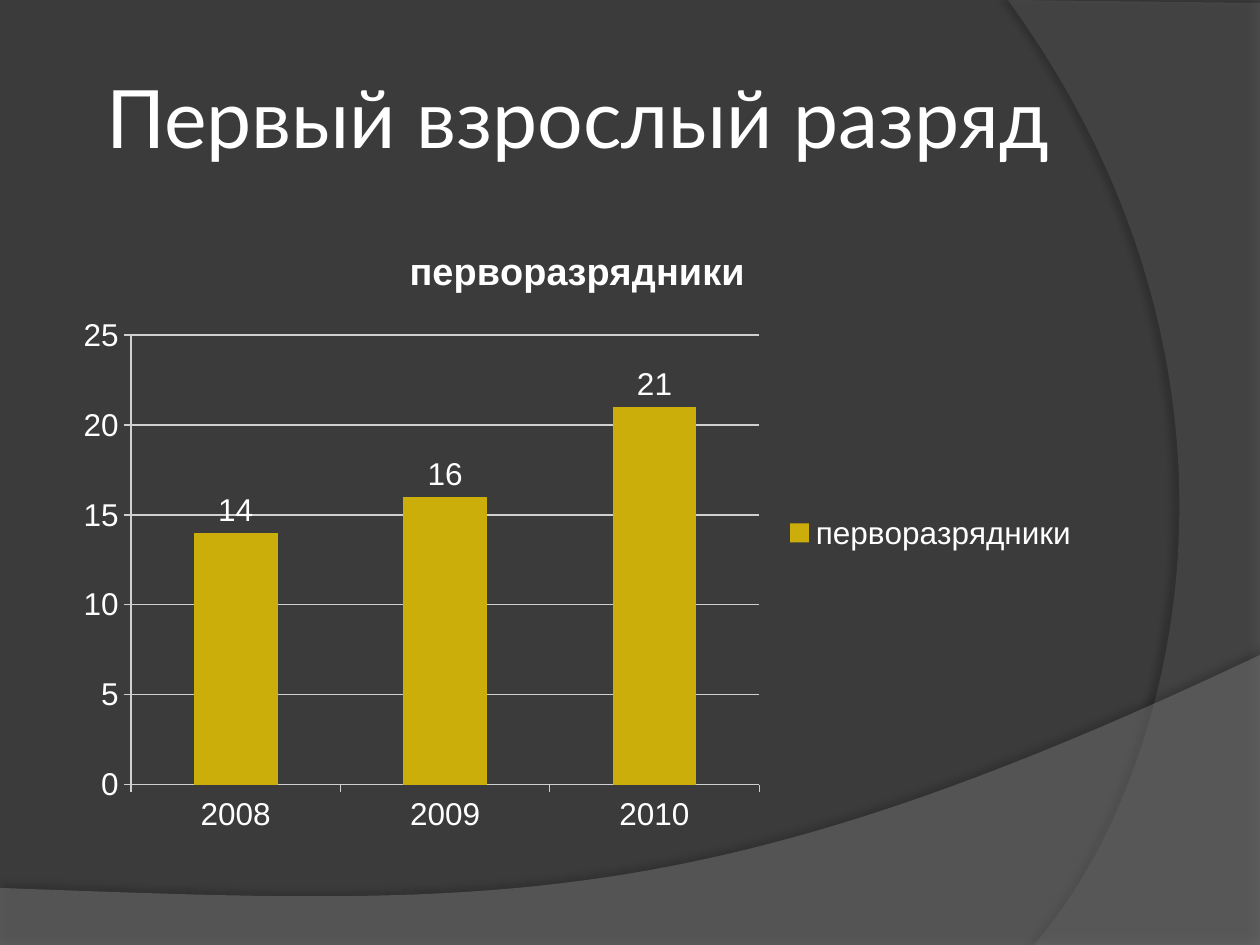
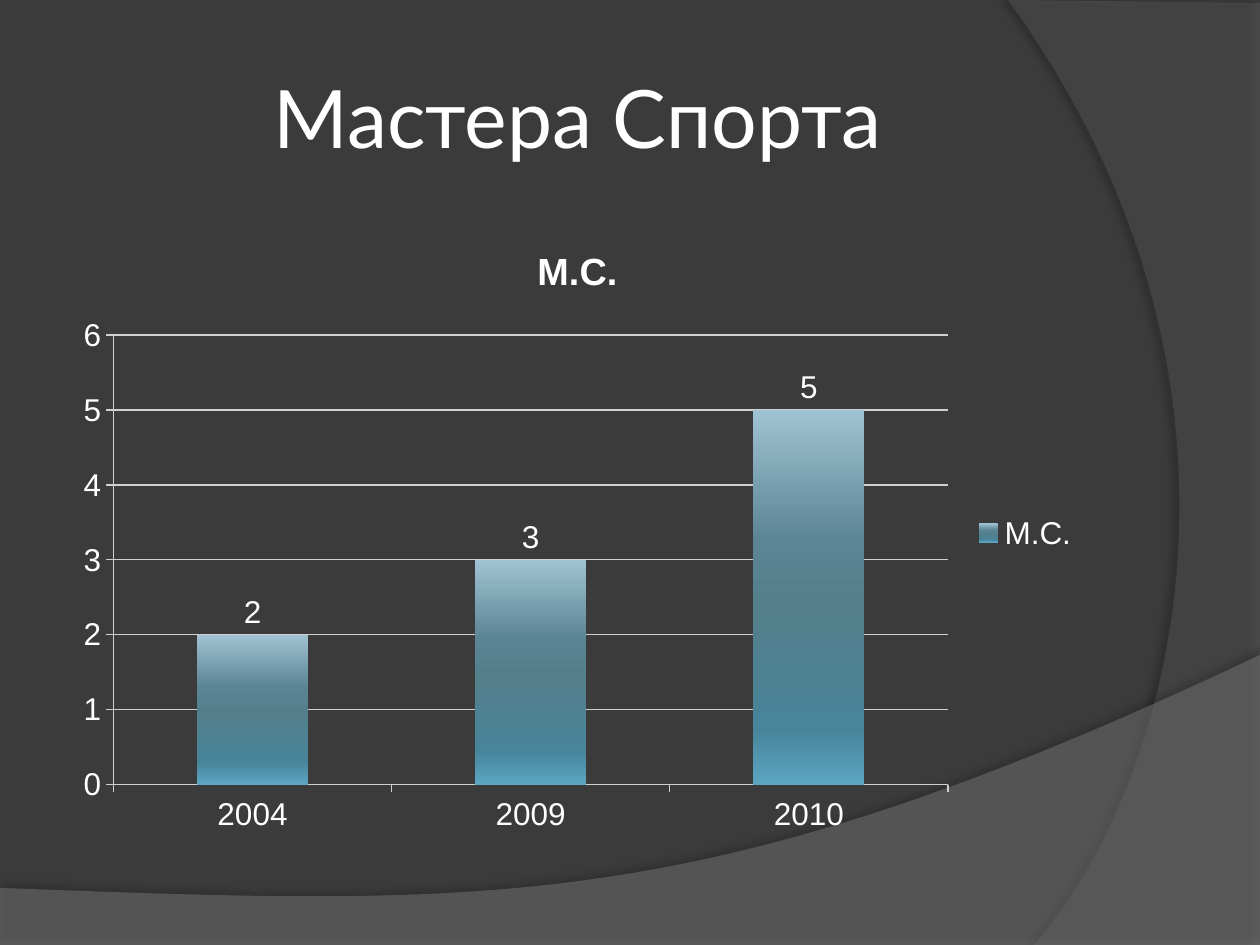
from dataclasses import dataclass

from lxml.etree import SubElement
from pptx import Presentation
from pptx.chart.data import CategoryChartData
from pptx.dml.color import RGBColor
from pptx.enum.chart import XL_CHART_TYPE, XL_LABEL_POSITION, XL_LEGEND_POSITION, XL_TICK_MARK
from pptx.enum.text import MSO_ANCHOR, MSO_AUTO_SIZE, PP_ALIGN
from pptx.oxml.ns import qn
from pptx.util import Emu, Pt


@dataclass(frozen=True)
class Theme:
    back: str = "3B3B3B"
    text: str = "FFFFFF"
    line: str = "D0D0D0"
    shade: str = "000000"
    floor: str = "7F7F7F"
    side: str = "5E5E5E"
    gold: str = "CCAE0A"
    steel: tuple = ((0, "A0C3D3"), (35, "5B8494"), (52, "537F8A"),
                    (85, "48849A"), (100, "5BA6C2"))
    head_font: str = "Lato"
    body_font: str = "Arial"
    head_size: float = 46
    name_size: float = 21.6
    body_size: float = 18


THEME = Theme()
SCALE = 914400 / 126
WIDE, HIGH = 1260, 945
LEFT, WIDTH = 63, 1029


def px(n):
    return Emu(round(n * SCALE))


def rgb(code):
    return RGBColor.from_string(code)


def style(font, size, face, bold=False, color=THEME.text):
    font.size, font.name, font.bold = Pt(size), face, bold
    font.color.rgb = rgb(color)


def write(frame, text, align=PP_ALIGN.CENTER, **form):
    frame.text = text
    para = frame.paragraphs[0]
    para.alignment = align
    style(para.runs[0].font, **form)


def tint(parent, code, alpha):
    """Add a colour with an opacity in percent."""
    color = SubElement(parent, qn("a:srgbClr"), val=code)
    SubElement(color, qn("a:alpha"), val=str(alpha * 1000))


def curve(ends, steps=48):
    """Points of a cubic curve after its first end."""
    a, b, c, d = ends
    for i in range(1, steps + 1):
        t = i / steps
        u = 1 - t
        yield tuple(u**3 * p + 3 * u * u * t * q + 3 * u * t * t * r + t**3 * s
                    for p, q, r, s in zip(a, b, c, d))


def band(slide, points, color, alpha, shade, gap, angle):
    """Draw a sheer band with a soft shadow, at the back of the layout."""
    spots = [(px(x), px(y)) for x, y in points]
    build = slide.shapes.build_freeform(*spots[0], scale=1.0)
    build.add_line_segments(spots[1:], close=True)
    shape = build.convert_to_shape()
    shape.line.fill.background()
    shape.fill.solid()
    shape.fill.fore_color.rgb = rgb(color)
    shape.shadow.inherit = False
    node = shape._element
    fill = node.spPr.find(qn("a:solidFill"))
    fill.clear()
    tint(fill, color, alpha)
    glow = SubElement(node.spPr.find(qn("a:effectLst")), qn("a:outerShdw"),
                      blurRad=str(Pt(4)), dist=str(Pt(gap)),
                      dir=str(angle * 60000), algn="ctr", rotWithShape="0")
    tint(glow, THEME.shade, shade)
    slide.slide_layout.shapes[0]._element.addprevious(node)


def backdrop(slide):
    """Set the shared background and the two bands once for all slides."""
    fill = slide.slide_layout.slide_master.background.fill
    fill.solid()
    fill.fore_color.rgb = rgb(THEME.back)
    wave = ((WIDE, 655), (704, 919), (493, 906), (0, 888))
    band(slide, [(0, 888), (0, HIGH), (WIDE, HIGH), wave[0], *curve(wave)],
         THEME.floor, 45, shade=35, gap=3.5, angle=270)
    arc = ((1034, HIGH), (1178, 780), (1283, 378), (1008, 0))
    band(slide, [(WIDE, 3), (WIDE, HIGH), arc[0], *curve(arc)],
         THEME.side, 40, shade=45, gap=4, angle=180)


def headline(slide, text):
    title = slide.shapes.title
    title.left, title.top, title.width, title.height = map(px, (LEFT, 38, WIDTH, 157))
    frame = title.text_frame
    frame.word_wrap, frame.auto_size = True, MSO_AUTO_SIZE.NONE
    frame.vertical_anchor = MSO_ANCHOR.MIDDLE
    frame.margin_left = frame.margin_right = px(6)
    frame.margin_top = frame.margin_bottom = px(6)
    write(frame, text, size=THEME.head_size, face=THEME.head_font)


def paint(series, color):
    """Fill the bars with one colour, or with stops from top to bottom."""
    fill = series.format.fill
    if isinstance(color, str):
        fill.solid()
        fill.fore_color.rgb = rgb(color)
        return
    fill.gradient()
    fill.gradient_angle = 270
    stops = next(series._element.iter(qn("a:gsLst")))
    stops.clear()
    for place, code in color:
        stop = SubElement(stops, qn("a:gs"), pos=str(place * 1000))
        SubElement(stop, qn("a:srgbClr"), val=code)


def rule(line):
    line.color.rgb = rgb(THEME.line)
    line.width = Pt(0.75)


def columns(slide, name, years, counts, color, top, step):
    data = CategoryChartData()
    data.categories = years
    data.add_series(name, counts)
    chart = slide.shapes.add_chart(XL_CHART_TYPE.COLUMN_CLUSTERED, px(LEFT), px(221),
                                   px(WIDTH), px(624), data).chart
    form = dict(size=THEME.body_size, face=THEME.body_font)
    style(chart.font, **form)
    chart.has_title = True
    write(chart.chart_title.text_frame, name, size=THEME.name_size,
          face=THEME.body_font, bold=True)
    chart.has_legend = True
    chart.legend.position = XL_LEGEND_POSITION.RIGHT
    chart.legend.include_in_layout = False
    for axis in (chart.category_axis, chart.value_axis):
        axis.major_tick_mark = XL_TICK_MARK.OUTSIDE
        rule(axis.format.line)
    scale = chart.value_axis
    scale.minimum_scale, scale.maximum_scale, scale.major_unit = 0, top, step
    rule(scale.major_gridlines.format.line)
    plot = chart.plots[0]
    plot.gap_width, plot.vary_by_categories = 150, False
    plot.has_data_labels = True
    labels = plot.data_labels
    labels.show_value, labels.position = True, XL_LABEL_POSITION.OUTSIDE_END
    style(labels.font, **form)
    series = plot.series[0]
    series.invert_if_negative = False
    paint(series, color)


def main():
    deck = Presentation()
    deck.slide_width, deck.slide_height = px(WIDE), px(HIGH)
    layout = deck.slide_layouts.get_by_name("Title Only")

    first = deck.slides.add_slide(layout)
    backdrop(first)
    headline(first, "Первый взрослый разряд")
    columns(first, "перворазрядники", ("2008", "2009", "2010"), (14, 16, 21),
            THEME.gold, top=25, step=5)

    second = deck.slides.add_slide(layout)
    headline(second, "Мастера Спорта")
    columns(second, "М.С.", ("2004", "2009", "2010"), (2, 3, 5),
            THEME.steel, top=6, step=1)

    deck.save("out.pptx")


if __name__ == "__main__":
    main()
